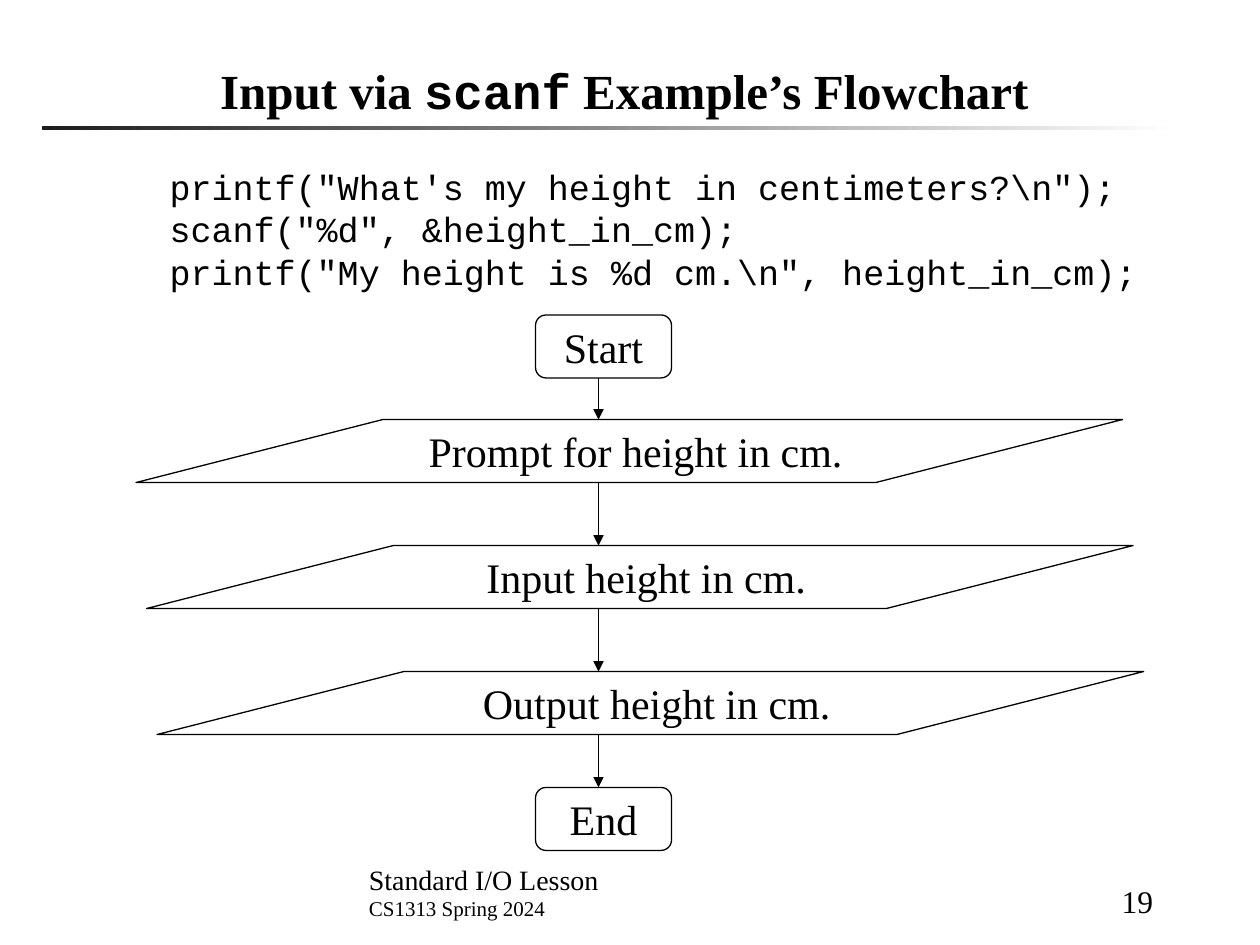
from lxml import etree
from pptx import Presentation
from pptx.dml.color import RGBColor
from pptx.enum.shapes import MSO_CONNECTOR, MSO_SHAPE
from pptx.enum.text import MSO_ANCHOR, PP_ALIGN
from pptx.oxml.ns import qn
from pptx.util import Inches, Pt

BLACK = RGBColor(0, 0, 0)
DARK = RGBColor(0x1C, 0x1C, 0x1C)
WHITE = RGBColor(255, 255, 255)
SERIF, MONO = "Times New Roman", "Courier New"
LEFT, CENTER, RIGHT = PP_ALIGN.LEFT, PP_ALIGN.CENTER, PP_ALIGN.RIGHT
TOP, BOTTOM = MSO_ANCHOR.TOP, MSO_ANCHOR.BOTTOM
RECT, ROUND, SLANT = (MSO_SHAPE.RECTANGLE, MSO_SHAPE.ROUNDED_RECTANGLE,
                      MSO_SHAPE.PARALLELOGRAM)
STRAIGHT = MSO_CONNECTOR.STRAIGHT

STEP_H = 0.5
ARROW_X = 4.75
CODE = [
    "    printf(\"What's my height in centimeters?\\n\");",
    "    scanf(\"%d\", &height_in_cm);",
    "    printf(\"My height is %d cm.\\n\", height_in_cm);",
]
# label, shape, shape left, shape width, label left, label width, top
STEPS = [("Start", ROUND, 4.25, 1.08, 4.33, 0.92, 2.5)]
for i, verb in enumerate(["Prompt for", "Input", "Output"]):
    shift = i / 12
    STEPS.append((f"{verb} height in cm.", SLANT, 1.08 + shift, 7.83,
                  2.42 + shift, 5.25, 3.33 + i))
STEPS.append(("End", ROUND, 4.25, 1.08, 4.33, 0.92, 6.25))
ADJUST = {ROUND: 0.167, SLANT: 3.917}


class Chart:
    """Draws flowchart parts on one slide in a shared style."""

    def __init__(self, slide):
        self.slide = slide
        self.ink = BLACK
        self.width = Pt(0.75)

    def text(self, box, lines, sizes, font=SERIF, align=LEFT, anchor=TOP):
        """Add a text box; each line is a list of (text, font) runs or a string."""
        frame = self.slide.shapes.add_textbox(*map(Inches, box)).text_frame
        frame.word_wrap = True
        frame.vertical_anchor = anchor
        for i, (line, size) in enumerate(zip(lines, sizes)):
            para = frame.paragraphs[0] if i == 0 else frame.add_paragraph()
            para.alignment = align
            para.font.size = Pt(size)
            para.font.color.rgb = self.ink
            if isinstance(line, str):
                para.font.name = font
                para.add_run().text = line
                continue
            for words, face in line:
                run = para.add_run()
                run.text = words
                run.font.name = face
        return frame

    def title(self, box, runs):
        frame = self.text(box, [runs], [28], align=CENTER, anchor=BOTTOM)
        frame.paragraphs[0].font.bold = True

    def code(self, box, lines):
        frame = self.text(box, lines, [20] * len(lines), MONO)
        for i, para in enumerate(frame.paragraphs):
            para.line_spacing = 0.8
            if i:
                para.space_before = Pt(5)

    def rule(self, box):
        bar = self.slide.shapes.add_shape(RECT, *map(Inches, box))
        bar.shadow.inherit = False
        bar.line.fill.background()
        bar.fill.gradient()
        bar.fill.gradient_angle = 0
        for stop, color, place in zip(bar.fill.gradient_stops, (DARK, WHITE), (0, 1)):
            stop.color.rgb = color
            stop.position = place

    def step(self, label, kind, left, width, text_left, text_width, top):
        self.text((text_left, top, text_width, STEP_H), [label], [24], align=CENTER)
        shape = self.slide.shapes.add_shape(
            kind, Inches(left), Inches(top), Inches(width), Inches(STEP_H))
        shape.adjustments[0] = ADJUST[kind]
        shape.shadow.inherit = False
        shape.fill.background()
        shape.line.color.rgb = self.ink
        shape.line.width = self.width

    def arrow(self, start, end):
        line = self.slide.shapes.add_connector(
            STRAIGHT, Inches(ARROW_X), Inches(start), Inches(ARROW_X), Inches(end))
        line.line.color.rgb = self.ink
        line.line.width = self.width
        etree.SubElement(line.line._get_or_add_ln(), qn("a:tailEnd"), type="triangle")
        etree.SubElement(line._element.spPr, qn("a:effectLst"))


def main():
    deck = Presentation()
    deck.slide_width, deck.slide_height = Inches(10), Inches(7.5)
    chart = Chart(deck.slides.add_slide(deck.slide_layouts[6]))

    chart.rule((0.33, 1, 9, 0.03))
    chart.title((0.58, 0.42, 8.75, 0.58), [
        ("Input via ", SERIF), ("scanf", MONO), (" Example’s Flowchart", SERIF)])
    chart.code((0.58, 1.33, 8.75, 1.06), CODE)

    for step in STEPS:
        chart.step(*step)
    for above, below in zip(STEPS, STEPS[1:]):
        chart.arrow(above[-1] + STEP_H, below[-1])

    chart.text((2.83, 6.86, 4.83, 0.5),
               ["Standard I/O Lesson", "CS1313 Spring 2024"], [16, 12], anchor=BOTTOM)
    chart.text((7.83, 6.85, 1.42, 0.5), ["19"], [18], align=RIGHT, anchor=BOTTOM)
    deck.save("out.pptx")


if __name__ == "__main__":
    main()
